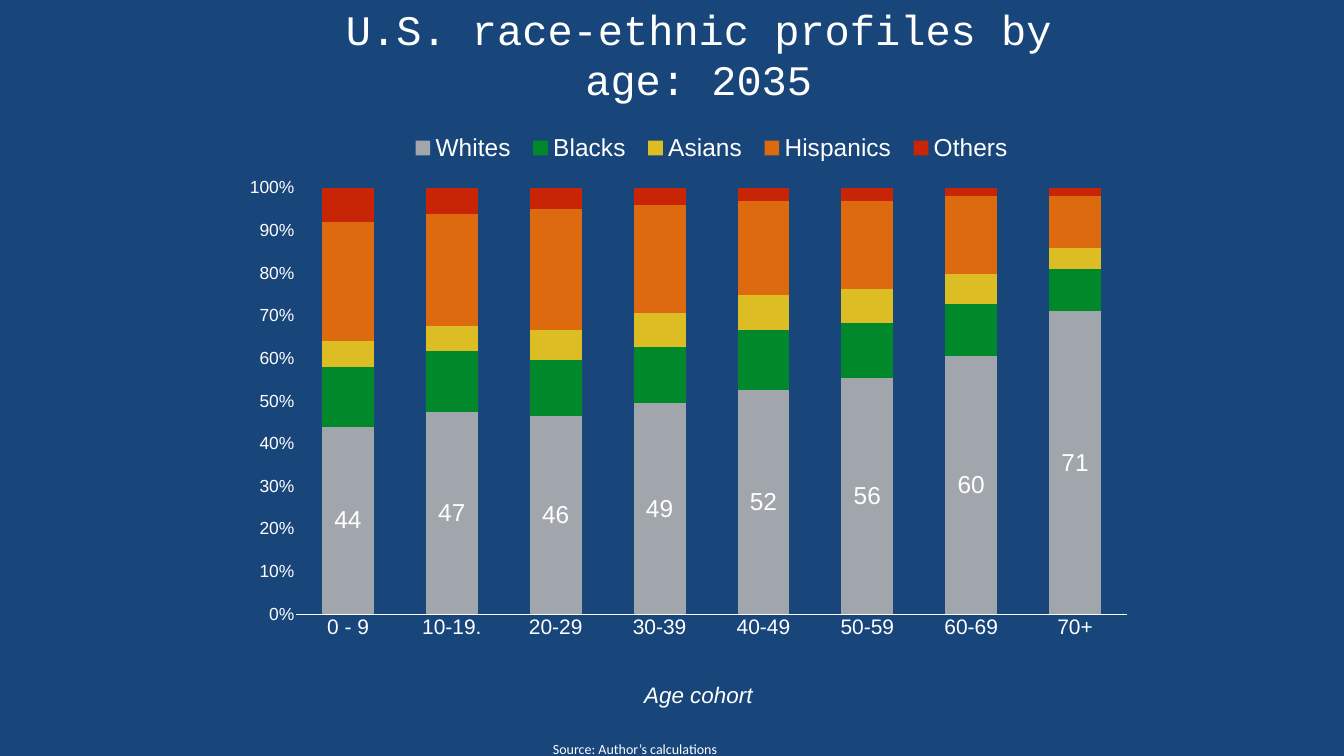
from lxml import etree
from pptx import Presentation
from pptx.chart.data import CategoryChartData
from pptx.dml.color import RGBColor
from pptx.enum.chart import XL_CHART_TYPE as ChartType
from pptx.enum.chart import XL_LABEL_POSITION as LabelPosition
from pptx.enum.chart import XL_LEGEND_POSITION as LegendPosition
from pptx.enum.chart import XL_TICK_MARK as TickMark
from pptx.enum.text import MSO_ANCHOR as Anchor
from pptx.enum.text import PP_ALIGN as Align
from pptx.oxml.ns import qn
from pptx.util import Inches, Pt

COLORS = {
    "navy": "18457A",
    "white": "FFFFFF",
    "Whites": "A1A6AC",
    "Blacks": "00882B",
    "Asians": "DCBD23",
    "Hispanics": "DE6A10",
    "Others": "C82506",
}

AGE_COHORTS = ["0 - 9", "10-19.", "20-29", "30-39",
               "40-49", "50-59", "60-69", "70+"]
SHARES = {
    "Whites": [44, 47, 46, 49, 52, 56, 60, 71],
    "Blacks": [14, 14, 13, 13, 14, 13, 12, 10],
    "Asians": [6, 6, 7, 8, 8, 8, 7, 5],
    "Hispanics": [28, 26, 28, 25, 22, 21, 18, 12],
    "Others": [8, 6, 5, 4, 3, 3, 2, 2],
}


def rgb(name):
    return RGBColor.from_string(COLORS[name])


def paint(fill, name):
    fill.solid()
    fill.fore_color.rgb = rgb(name)


def style_font(font, size, face="Arial", **extras):
    for attribute, value in {"name": face, "size": Pt(size), **extras}.items():
        setattr(font, attribute, value)
    font.color.rgb = rgb("white")


def add_text(slide, box, text, size, face, align=Align.LEFT, inset=0.08,
             fill=None, **extras):
    textbox = slide.shapes.add_textbox(*map(Inches, box))
    if fill:
        paint(textbox.fill, fill)
    frame = textbox.text_frame
    margins = {f"margin_{side}": Inches(inset)
               for side in ("left", "top", "right", "bottom")}
    settings = {"word_wrap": True, "vertical_anchor": Anchor.MIDDLE, **margins}
    for attribute, value in settings.items():
        setattr(frame, attribute, value)
    paragraph = frame.paragraphs[0]
    paragraph.alignment = align
    run = paragraph.add_run()
    run.text = text
    style_font(run.font, size, face, **extras)


def place(part, x, y, w, h, inner=False):
    """Give a plot area or legend a fixed place, in fractions of the chart."""
    for old in part.findall(qn("c:layout")):
        part.remove(old)
    layout = etree.Element(qn("c:layout"))
    manual = etree.SubElement(layout, qn("c:manualLayout"))
    values = {"layoutTarget": "inner"} if inner else {}
    values.update(xMode="edge", yMode="edge", x=x, y=y, w=w, h=h)
    for tag, value in values.items():
        etree.SubElement(manual, qn(f"c:{tag}")).set("val", str(value))
    # The layout opens a plot area, but follows the position of a legend
    position = part.find(qn("c:legendPos"))
    if position is None:
        part.insert(0, layout)
    else:
        position.addnext(layout)


def style_axis(axis, size):
    settings = {
        "has_major_gridlines": False,
        "major_tick_mark": TickMark.NONE,
        "minor_tick_mark": TickMark.NONE,
    }
    for attribute, value in settings.items():
        setattr(axis, attribute, value)
    style_font(axis.tick_labels.font, size)


def label_shares(series):
    labels = series.data_labels
    settings = {
        "show_value": True,
        "number_format": "#,##0",
        "number_format_is_linked": False,
        "position": LabelPosition.CENTER,
    }
    for attribute, value in settings.items():
        setattr(labels, attribute, value)
    style_font(labels.font, 35)


def add_profile_chart(slide, box):
    data = CategoryChartData(number_format="#,##0")
    data.categories = AGE_COHORTS
    for group, shares in SHARES.items():
        data.add_series(group, shares)
    chart = slide.shapes.add_chart(
        ChartType.COLUMN_STACKED_100, *map(Inches, box), data).chart
    chart.has_title = False
    style_font(chart.font, 10)

    # Stacked columns, one colour per group
    plot = chart.plots[0]
    for attribute, value in {"gap_width": 100, "overlap": 100,
                             "vary_by_categories": False}.items():
        setattr(plot, attribute, value)
    for series in plot.series:
        paint(series.format.fill, series.name)
        series.invert_if_negative = False
    label_shares(plot.series[0])

    # Axes
    cohort_axis, share_axis = chart.category_axis, chart.value_axis
    style_axis(cohort_axis, 30)
    paint(cohort_axis.format.line.fill, "white")
    cohort_axis.format.line.width = Pt(0.75)
    style_axis(share_axis, 25)
    share_axis.format.line.fill.background()
    for attribute, value in {"minimum_scale": 0, "maximum_scale": 1,
                             "major_unit": 0.1}.items():
        setattr(share_axis, attribute, value)
    share_axis.tick_labels.number_format = "0%"
    share_axis.tick_labels.number_format_is_linked = False

    # Legend above the columns
    chart.has_legend = True
    legend = chart.legend
    legend.position = LegendPosition.BOTTOM
    legend.include_in_layout = False
    style_font(legend.font, 35)
    chart_area = chart.element.find(qn("c:chart"))
    place(chart_area.find(qn("c:legend")), 0.17, 0.01, 0.71, 0.07)
    place(chart_area.find(qn("c:plotArea")), 0.05, 0.12, 0.95, 0.8, inner=True)


def main():
    deck = Presentation()
    deck.slide_width, deck.slide_height = Inches(26.67), Inches(15)
    slide = deck.slides.add_slide(deck.slide_layouts[6])
    paint(slide.background.fill, "navy")

    # Title and source
    add_text(slide, (6.74, 0.48, 14.25, 1.18),
             "U.S. race-ethnic profiles by age: 2035", 60, "Courier New",
             Align.CENTER)
    add_text(slide, (10.89, 14.6, 6.18, 0.5),
             "Source: Author’s calculations", 20, "Calibri")

    # Chart with the caption of its horizontal axis
    add_profile_chart(slide, (4.96, 2.46, 17.41, 10.57))
    add_text(slide, (11.28, 13.46, 5.16, 0.65), "Age cohort", 32, "Arial",
             Align.CENTER, inset=0.06, fill="navy", italic=True)

    deck.save("out.pptx")


if __name__ == "__main__":
    main()
